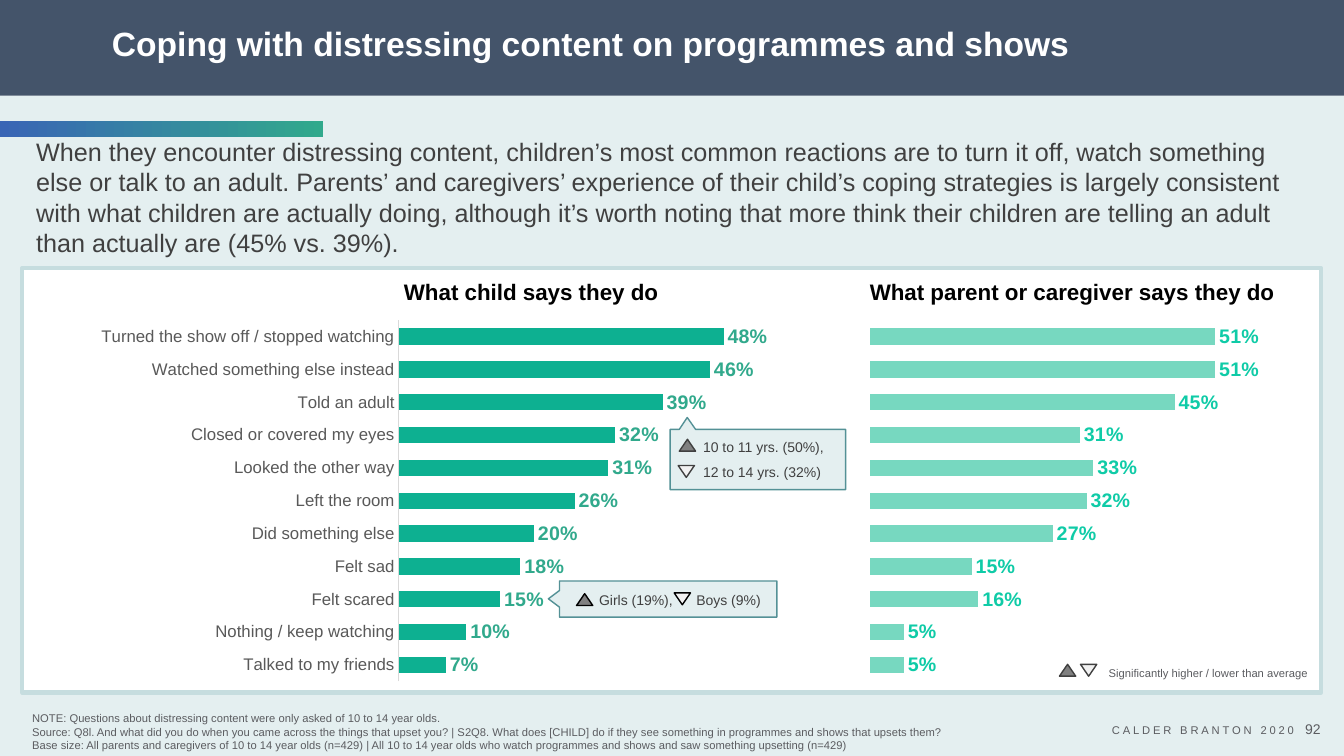
from typing import NamedTuple, Optional

from lxml import etree
from pptx import Presentation
from pptx import util as u
from pptx.chart import data as chart_data
from pptx.dml.color import RGBColor
from pptx.enum import chart as charts, shapes, text
from pptx.oxml import ns

NAVY = RGBColor(0x44, 0x54, 0x6A)
MIST = RGBColor(0xE4, 0xEF, 0xF0)
PANEL_EDGE = RGBColor(0xC6, 0xDD, 0xDF)
CALLOUT_EDGE = RGBColor(0x54, 0x91, 0x96)
WHITE = RGBColor(0xFF, 0xFF, 0xFF)
BLACK = RGBColor(0, 0, 0)
DARK = RGBColor(0x40, 0x40, 0x40)
FOOT_GREY = RGBColor(0x5B, 0x5C, 0x60)
AXIS_TEXT = RGBColor(0x59, 0x59, 0x59)
AXIS_LINE = RGBColor(0xD9, 0xD9, 0xD9)
HIGHER = RGBColor(0x80, 0x80, 0x80)
LOWER = RGBColor(0xF2, 0xF2, 0xF2)
BLUE = RGBColor(0x39, 0x65, 0xB5)
GREEN = RGBColor(0x31, 0xA9, 0x8C)
CHILD_BAR = RGBColor(0x0D, 0xB0, 0x91)
PARENT_BAR = RGBColor(0x77, 0xD8, 0xC0)
PARENT_LABEL = RGBColor(0x0F, 0xCB, 0xA7)
LEFT, RIGHT = text.PP_ALIGN.LEFT, text.PP_ALIGN.RIGHT


class Box(NamedTuple):
    left: float
    top: float
    width: float
    height: float


class Label(NamedTuple):
    box: Box
    lines: list[str]
    size: float
    color: RGBColor
    bold: bool = False
    align: text.PP_ALIGN = LEFT
    line_spacing: float = 1.0
    space_after: float = 0
    inset: float = 0.25
    tracking: int = 0


class Marker(NamedTuple):
    left: float
    top: float
    higher: bool
    edge: RGBColor = DARK


class BarChart(NamedTuple):
    left: float
    categories: list[str]
    values: list[float]
    bar: RGBColor
    label: RGBColor
    show_categories: bool


REACTIONS = ["Turned the show off / stopped watching", "Watched something else instead",
             "Told an adult", "Closed or covered my eyes", "Looked the other way",
             "Left the room", "Did something else", "Felt sad", "Felt scared",
             "Nothing / keep watching", "Talked to my friends"]
CHARTS = [
    BarChart(0.98, REACTIONS, [.48, .46, .39, .32, .31, .26, .2, .18, .15, .1, .07],
             CHILD_BAR, GREEN, True),
    BarChart(12.86, [str(n) for n in range(1, 12)],
             [.51, .51, .45, .31, .33, .32, .27, .15, .16, .05, .05],
             PARENT_BAR, PARENT_LABEL, False),
]
TITLE = Label(Box(2.57, 0.38, 25.6, 1.52),
              ["Coping with distressing content on programmes and shows"],
              24, WHITE, bold=True, line_spacing=0.9)
SUMMARY = Label(Box(0.56, 3.63, 32.74, 2.67), [
    "When they encounter distressing content, children’s most common reactions are to turn it off, "
    "watch something else or talk to an adult. Parents’ and caregivers’ experience of their child’s "
    "coping strategies is largely consistent with what children are actually doing, although it’s "
    "worth noting that more think their children are telling an adult than actually are "
    "(45% vs. 39%)."], 18, DARK, inset=0.35)
LABELS = [
    Label(Box(27.18, 17.91, 5.69, 0.99), ["CALDER BRANTON 2020"], 8, FOOT_GREY,
          align=RIGHT, tracking=200),
    Label(Box(32.36, 18.03, 1.17, 0.69), ["92"], 10, FOOT_GREY, align=RIGHT),
    Label(Box(0.56, 17.83, 26.14, 1.22), [
        "NOTE: Questions about distressing content were only asked of 10 to 14 year olds.",
        "Source: Q8l. And what did you do when you came across the things that upset you? | S2Q8. "
        "What does [CHILD] do if they see something in programmes and shows that upsets them?",
        "Base size: All parents and caregivers of 10 to 14 year olds (n=429) | All 10 to 14 year olds "
        "who watch programmes and shows and saw something upsetting (n=429)"],
        8, FOOT_GREY),
    Label(Box(9.93, 6.88, 7.47, 0.94), ["What child says they do"], 16, BLACK, bold=True),
    Label(Box(21.67, 6.88, 10.74, 0.94), ["What parent or caregiver says they do"],
          16, BLACK, bold=True),
    Label(Box(17.72, 10.82, 3.55, 1.5), ["10 to 11 yrs. (50%),", "12 to 14 yrs. (32%)"],
          10, DARK, space_after=6, inset=0),
    Label(Box(15.1, 14.67, 2.3, 0.9), ["Girls (19%),"], 10, DARK, inset=0),
    Label(Box(17.55, 14.67, 2.02, 0.9), ["Boys (9%)"], 10, DARK, inset=0),
    Label(Box(27.69, 16.28, 6.1, 1.4), ["Significantly higher / lower than average"],
          8, FOOT_GREY, line_spacing=0.8),
]
CALLOUTS = [
    [(17.32, 10.52), (17.53, 10.82), (21.31, 10.82), (21.31, 12.34), (16.89, 12.34),
     (16.89, 10.82), (17.12, 10.82)],
    [(14.1, 14.64), (19.58, 14.64), (19.58, 15.55), (14.1, 15.55), (14.1, 15.3),
     (13.82, 15.09), (14.1, 14.88)],
]
MARKERS = [
    Marker(17.12, 11.07, True), Marker(17.09, 11.73, False),
    Marker(14.53, 14.96, True, BLACK), Marker(16.99, 14.94, False, BLACK),
    Marker(26.7, 16.74, True), Marker(27.23, 16.74, False),
]


def paint(shape, fill: RGBColor, edge: Optional[RGBColor] = None, weight: float = 1) -> None:
    shape.shadow.inherit = False
    shape.fill.solid()
    shape.fill.fore_color.rgb = fill
    if edge is None:
        shape.line.fill.background()
    else:
        shape.line.color.rgb = edge
        shape.line.width = u.Pt(weight)


def add_preset(slide, kind, box: Box, fill: RGBColor, edge: Optional[RGBColor] = None,
               weight: float = 1):
    shape = slide.shapes.add_shape(kind, *map(u.Cm, box))
    paint(shape, fill, edge, weight)
    return shape


def write_label(shape, label: Label) -> None:
    shape.left, shape.top, shape.width, shape.height = map(u.Cm, label.box)
    frame = shape.text_frame
    frame.word_wrap = True
    frame.auto_size = text.MSO_AUTO_SIZE.NONE
    frame.vertical_anchor = text.MSO_ANCHOR.MIDDLE
    frame.margin_left = u.Cm(label.inset)
    frame.margin_right = u.Cm(min(label.inset, 0.25))
    frame.text = "\n".join(label.lines)
    for paragraph in frame.paragraphs:
        paragraph.alignment = label.align
        paragraph.line_spacing = label.line_spacing
        paragraph.space_before = u.Pt(0)
        paragraph.space_after = u.Pt(label.space_after)
        properties = paragraph._p.get_or_add_pPr()
        properties.set("marL", "0")
        properties.set("indent", "0")
        etree.SubElement(properties, ns.qn("a:buNone"))
        style_font(paragraph.font, label.size, label.color, label.bold)
        if label.tracking:
            paragraph.runs[0]._r.get_or_add_rPr().set("spc", str(label.tracking))


def style_font(font, size: float, color: RGBColor, bold: bool = False) -> None:
    font.name, font.size, font.bold = "Arial", u.Pt(size), bold
    font.color.rgb = color


def add_bars(slide, bars: BarChart) -> None:
    data = chart_data.CategoryChartData(number_format="0%")
    data.categories = bars.categories
    data.add_series("Series 1", bars.values)
    chart = slide.shapes.add_chart(charts.XL_CHART_TYPE.BAR_CLUSTERED,
                                   *map(u.Cm, (bars.left, 7.65, 19.84, 11.02)), data).chart
    style_font(chart.font, 10, BLACK)
    chart.has_legend = chart.has_title = False
    categories, values = chart.category_axis, chart.value_axis
    categories.reverse_order = True
    categories.visible = bars.show_categories
    categories.major_tick_mark = charts.XL_TICK_MARK.NONE
    categories.format.line.color.rgb = AXIS_LINE
    categories.format.line.width = u.Pt(0.75)
    style_font(categories.tick_labels.font, 12, AXIS_TEXT)
    values.minimum_scale, values.maximum_scale = 0, 0.6
    values.has_major_gridlines = values.visible = False
    plot = chart.plots[0]
    plot.gap_width = 100
    plot.vary_by_categories = False
    fill = plot.series[0].format.fill
    fill.solid()
    fill.fore_color.rgb = bars.bar
    plot.has_data_labels = True
    labels = plot.data_labels
    labels.show_value = True
    labels.number_format, labels.number_format_is_linked = "0%", False
    labels.position = charts.XL_LABEL_POSITION.OUTSIDE_END
    style_font(labels.font, 14, bars.label, True)
    area = chart._chartSpace.chart.plotArea
    for layout in area.findall(ns.qn("c:layout")):
        area.remove(layout)
    layout = etree.Element(ns.qn("c:layout"))
    area.insert(0, layout)
    manual = etree.SubElement(layout, ns.qn("c:manualLayout"))
    for tag, value in [("layoutTarget", "inner"), ("xMode", "edge"), ("yMode", "edge"),
                       ("x", "0.457"), ("y", "0.038"), ("w", "0.516"), ("h", "0.826")]:
        etree.SubElement(manual, ns.qn(f"c:{tag}"), val=value)


def add_callout(slide, points: list[tuple[float, float]]) -> None:
    corners = [(u.Cm(x), u.Cm(y)) for x, y in points]
    builder = slide.shapes.build_freeform(*corners[0])
    builder.add_line_segments(corners[1:], close=True)
    paint(builder.convert_to_shape(), MIST, CALLOUT_EDGE)


def main() -> None:
    presentation = Presentation()
    presentation.slide_width, presentation.slide_height = u.Cm(33.87), u.Cm(19.05)
    slide = presentation.slides.add_slide(presentation.slide_layouts[1])
    rectangle = shapes.MSO_SHAPE.RECTANGLE
    add_preset(slide, rectangle, Box(0, 2.41, 33.87, 16.64), MIST)
    add_preset(slide, rectangle, Box(0, 0, 33.87, 2.41), NAVY)
    add_preset(slide, rectangle, Box(0.56, 6.76, 32.74, 10.69), WHITE, PANEL_EDGE, 3)
    accent = add_preset(slide, rectangle, Box(0, 3.04, 8.15, 0.41), BLUE)
    accent.fill.gradient()
    accent.fill.gradient_angle = 0
    for stop, color, position in zip(accent.fill.gradient_stops, (BLUE, GREEN), (0, 1)):
        stop.color.rgb, stop.position = color, position
    for placeholder, label in zip(list(slide.placeholders), (TITLE, SUMMARY)):
        write_label(placeholder, label)
        slide.shapes.element.append(placeholder.element)
    for bars in CHARTS:
        add_bars(slide, bars)
    for points in CALLOUTS:
        add_callout(slide, points)
    for label in LABELS:
        write_label(slide.shapes.add_textbox(0, 0, 0, 0), label)
    for marker in MARKERS:
        triangle = add_preset(slide, shapes.MSO_SHAPE.ISOSCELES_TRIANGLE,
                              Box(marker.left, marker.top, 0.41, 0.3),
                              HIGHER if marker.higher else LOWER, marker.edge)
        triangle.rotation = 0 if marker.higher else 180
    presentation.save("out.pptx")


if __name__ == "__main__":
    main()
